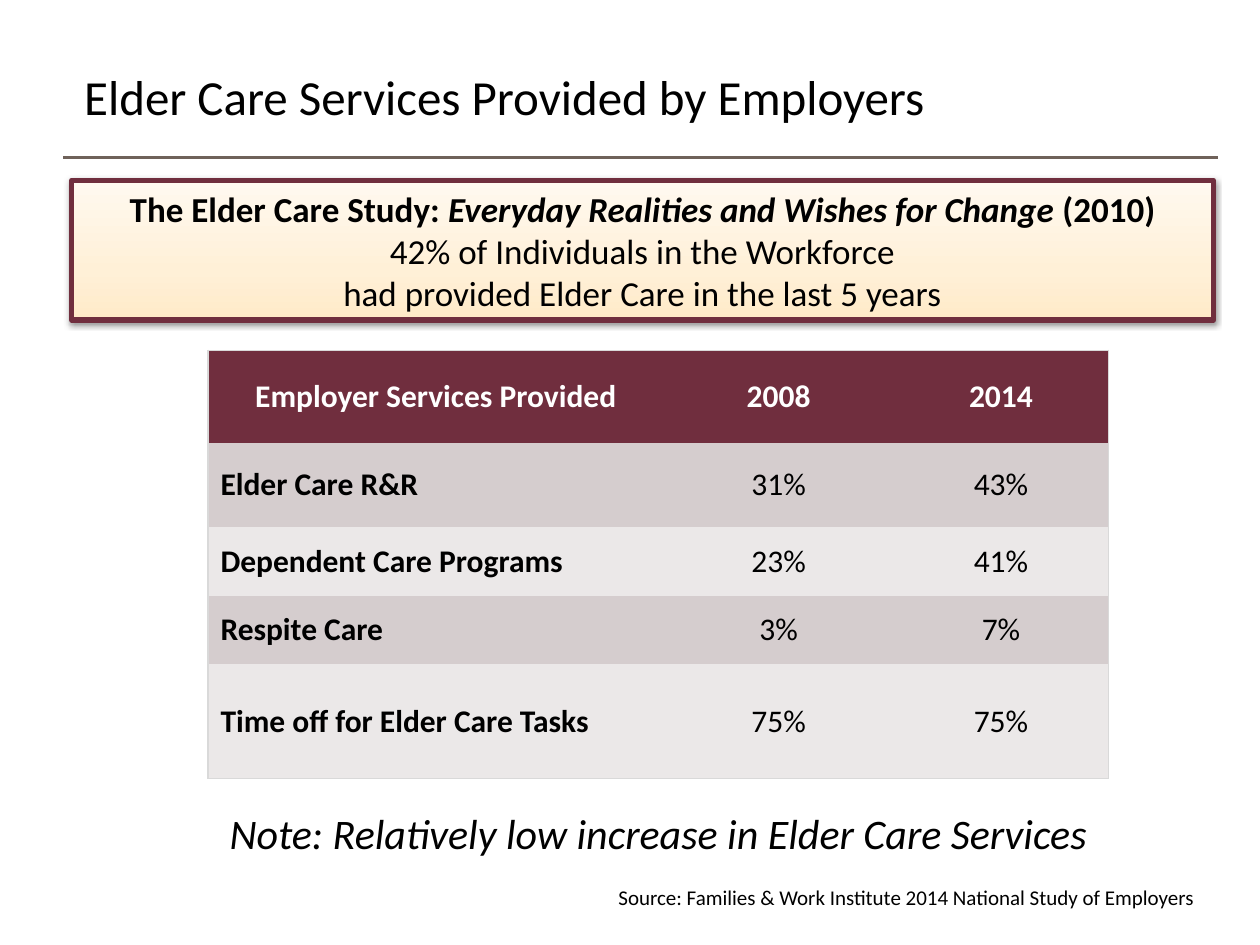
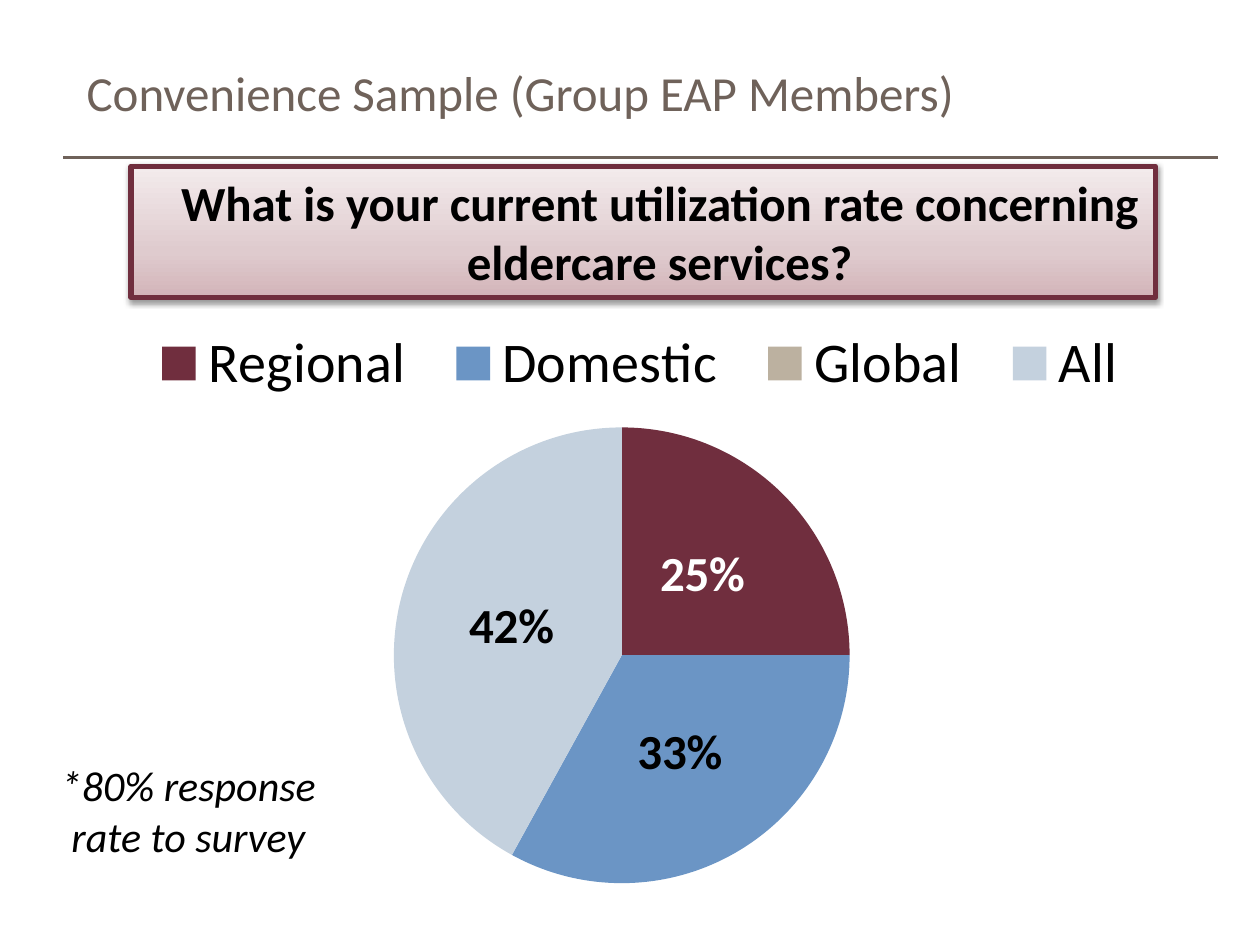
from copy import deepcopy

from lxml.etree import SubElement
from pptx import Presentation
from pptx.chart.data import CategoryChartData
from pptx.dml.color import RGBColor
from pptx.enum.chart import XL_CHART_TYPE, XL_LABEL_POSITION, XL_LEGEND_POSITION
from pptx.enum.shapes import MSO_CONNECTOR, MSO_SHAPE
from pptx.enum.text import MSO_ANCHOR, PP_ALIGN
from pptx.oxml import parse_xml
from pptx.oxml.ns import nsdecls, qn
from pptx.util import Inches, Pt

FONT = "Calibri"
BLACK = RGBColor(0x00, 0x00, 0x00)
WHITE = RGBColor(0xFF, 0xFF, 0xFF)
TAUPE = RGBColor(0x6F, 0x62, 0x5A)
WINE = RGBColor(0x70, 0x2E, 0x3E)
BORDER = RGBColor(0xD9, 0xD9, 0xD9)
ROW_FILLS = (RGBColor(0xD5, 0xCD, 0xCE), RGBColor(0xEB, 0xE8, 0xE8))
CREAM = (RGBColor(0xFF, 0xEA, 0xC8), RGBColor(0xFF, 0xF0, 0xD7), RGBColor(0xFF, 0xF9, 0xF0))
ROSE = (RGBColor(0xD3, 0xB4, 0xB9), RGBColor(0xDF, 0xCB, 0xCE), RGBColor(0xF3, 0xEB, 0xEC))
GRADIENT_POSITIONS = (0, 0.35, 1)
NO_TABLE_STYLE = "{2D5ABB26-0587-4C30-8999-92F81FD0307C}"

SERVICES_TITLE = "Elder Care Services Provided by Employers"
STUDY = [
    [("The Elder Care Study: ", {"bold": True}),
     ("Everyday Realities and Wishes for Change ", {"bold": True, "italic": True}),
     ("(2010)", {"bold": True})],
    "42% of Individuals in the Workforce",
    "had provided Elder Care in the last 5 years",
]
SERVICES = [
    ("Employer Services Provided", "2008", "2014"),
    ("Elder Care R&R", "31%", "43%"),
    ("Dependent Care Programs", "23%", "41%"),
    ("Respite Care", "3%", "7%"),
    ("Time off for Elder Care Tasks", "75%", "75%"),
]
COLUMN_WIDTHS = (3.62, 1.82, 1.71)
ROW_HEIGHTS = (0.74, 0.66, 0.55, 0.54, 0.91)
SERVICES_NOTE = "Note: Relatively low increase in Elder Care Services"
SOURCE = "Source: Families & Work Institute 2014 National Study of Employers"

SAMPLE_TITLE = "Convenience Sample (Group EAP Members)"
QUESTION = ["What is your current utilization rate concerning", "eldercare services?"]
UTILIZATION = [
    ("Regional", 25, WINE),
    ("Domestic", 33, RGBColor(0x6B, 0x95, 0xC5)),
    ("Global", 0, RGBColor(0xBC, 0xB1, 0xA0)),
    ("All", 42, RGBColor(0xC4, 0xD1, 0xDE)),
]
PLOT_LAYOUT = {"x": 0.3, "y": 0.32, "w": 0.38, "h": 0.68}
LEGEND_LAYOUT = {"x": 0.08, "y": 0.2, "w": 0.85, "h": 0.12}
RESPONSE_NOTE = "*80% response rate to survey"


def write(frame, paragraphs, size, color=BLACK, bold=False, italic=False,
          align=PP_ALIGN.LEFT, indent=0):
    frame.word_wrap = True
    if isinstance(paragraphs, str):
        paragraphs = [paragraphs]
    for index, spans in enumerate(paragraphs):
        para = frame.add_paragraph() if index else frame.paragraphs[0]
        para.alignment = align
        if indent:
            properties = para._p.get_or_add_pPr()
            properties.set("marL", str(Inches(indent)))
            properties.set("indent", "0")
        for words, style in [(spans, {})] if isinstance(spans, str) else spans:
            span = para.add_run()
            span.text = words
            span.font.name = FONT
            span.font.size = Pt(size)
            span.font.color.rgb = color
            span.font.bold = style.get("bold", bold)
            span.font.italic = style.get("italic", italic)


def add_text(page, bounds, words, size, **style):
    box = page.shapes.add_textbox(*map(Inches, bounds))
    write(box.text_frame, words, size, **style)


def new_page(deck):
    page = deck.slides.add_slide(deck.slide_layouts[6])
    ends = map(Inches, (0.5, 1.25, 9.67, 1.25))
    rule = page.shapes.add_connector(MSO_CONNECTOR.STRAIGHT, *ends)
    rule.line.color.rgb = TAUPE
    rule.line.width = Pt(2.25)
    SubElement(rule._element.spPr, qn("a:effectLst"))
    return page


def add_banner(page, bounds, words, size, colors, **style):
    banner = page.shapes.add_shape(MSO_SHAPE.RECTANGLE, *map(Inches, bounds))
    banner.fill.gradient()
    banner.fill.gradient_angle = 90
    stop_list = banner._element.spPr.find(".//" + qn("a:gsLst"))
    stop_list.append(deepcopy(stop_list[0]))
    for stop, color, position in zip(banner.fill.gradient_stops, colors, GRADIENT_POSITIONS):
        stop.color.rgb = color
        stop.position = position
    banner.line.color.rgb = WINE
    banner.line.width = Pt(3)
    banner.shadow.inherit = False
    banner._element.spPr.find(qn("a:effectLst")).append(parse_xml(
        f'<a:outerShdw {nsdecls("a")} blurRad="{Pt(3.1)}" dist="{Pt(1.6)}" dir="5400000" '
        'rotWithShape="0"><a:srgbClr val="000000"><a:alpha val="38000"/></a:srgbClr>'
        '</a:outerShdw>'))
    banner.text_frame.vertical_anchor = MSO_ANCHOR.MIDDLE
    write(banner.text_frame, words, size, align=PP_ALIGN.CENTER, **style)


def set_borders(cell, outer_sides):
    properties = cell._tc.get_or_add_tcPr()
    for side in ("L", "R", "T", "B"):
        if side in outer_sides:
            paint = f'<a:solidFill><a:srgbClr val="{BORDER}"/></a:solidFill>'
        else:
            paint = "<a:noFill/>"
        properties.append(parse_xml(
            f'<a:ln{side} {nsdecls("a")} w="{Pt(1)}">{paint}</a:ln{side}>'))


def add_services_table(page):
    size = len(SERVICES), len(COLUMN_WIDTHS)
    bounds = (1.65, 2.78, sum(COLUMN_WIDTHS), sum(ROW_HEIGHTS))
    frame = page.shapes.add_table(*size, *map(Inches, bounds))
    table = frame.table
    table._tbl.tblPr.find(qn("a:tableStyleId")).text = NO_TABLE_STYLE
    table.horz_banding = False
    for column, width in zip(table.columns, COLUMN_WIDTHS):
        column.width = Inches(width)
    for row, height in zip(table.rows, ROW_HEIGHTS):
        row.height = Inches(height)
    last_row, last_column = size[0] - 1, size[1] - 1
    for r, values in enumerate(SERVICES):
        for c, value in enumerate(values):
            cell = table.cell(r, c)
            edges = {"L": c == 0, "R": c == last_column, "T": r == 0, "B": r == last_row}
            set_borders(cell, [side for side, outer in edges.items() if outer])
            header = r == 0
            cell.fill.solid()
            cell.fill.fore_color.rgb = WINE if header else ROW_FILLS[(r - 1) % 2]
            cell.vertical_anchor = MSO_ANCHOR.MIDDLE
            write(cell.text_frame, value, 18, color=WHITE if header else BLACK,
                  bold=header or c == 0,
                  align=PP_ALIGN.CENTER if header or c else PP_ALIGN.LEFT)


def manual_layout(layout, target=""):
    modes = '<c:xMode val="edge"/><c:yMode val="edge"/>'
    sizes = "".join(f'<c:{key} val="{value}"/>' for key, value in layout.items())
    return parse_xml(f'<c:layout {nsdecls("c")}><c:manualLayout>{target}{modes}{sizes}'
                     '</c:manualLayout></c:layout>')


def place(element, layout, anchor, target=""):
    for old in element.findall(qn("c:layout")):
        element.remove(old)
    position = 0 if anchor is None else element.index(element.find(qn(anchor))) + 1
    element.insert(position, manual_layout(layout, target))


def style_labels(series):
    labels = series.data_labels
    labels.show_percentage = True
    labels.show_value = False
    labels.number_format = "0%"
    labels.number_format_is_linked = False
    labels.position = XL_LABEL_POSITION.CENTER
    labels.font.name = FONT
    labels.font.size = Pt(28)
    labels.font.bold = True
    labels.font.color.rgb = BLACK

    regional = series.points[0].data_label
    regional.font.name = FONT
    regional.font.size = Pt(28)
    regional.font.bold = True
    regional.font.color.rgb = WHITE
    regional.position = XL_LABEL_POSITION.CENTER
    for index, (_, value, _) in enumerate(UTILIZATION):
        if value == 0:
            series.points[index].data_label.position = XL_LABEL_POSITION.CENTER
    for label in labels._element.findall(qn("c:dLbl")):
        index = int(label.find(qn("c:idx")).get("val"))
        if UTILIZATION[index][1]:
            label.find(qn("c:showVal")).set("val", "0")
            label.find(qn("c:showPercent")).set("val", "1")
        else:
            for child in list(label)[1:]:
                label.remove(child)
            SubElement(label, qn("c:delete")).set("val", "1")


def add_utilization_chart(page):
    data = CategoryChartData()
    data.categories = [name for name, _, _ in UTILIZATION]
    data.add_series("Series 1", [value for _, value, _ in UTILIZATION])
    bounds = map(Inches, (0.27, 1.38, 9.52, 5.79))
    chart = page.shapes.add_chart(XL_CHART_TYPE.PIE, *bounds, data).chart
    chart.has_title = False
    chart.font.name = FONT
    chart.font.size = Pt(18)
    chart.font.color.rgb = BLACK
    chart.has_legend = True
    chart.legend.position = XL_LEGEND_POSITION.TOP
    chart.legend.include_in_layout = False
    chart.legend.font.name = FONT
    chart.legend.font.size = Pt(32)
    chart.legend.font.color.rgb = BLACK
    place(chart.legend._element, LEGEND_LAYOUT, "c:legendPos")
    plot_area = chart._chartSpace.find(".//" + qn("c:plotArea"))
    place(plot_area, PLOT_LAYOUT, None, '<c:layoutTarget val="inner"/>')
    series = chart.plots[0].series[0]
    for index, (_, _, color) in enumerate(UTILIZATION):
        fill = series.points[index].format.fill
        fill.solid()
        fill.fore_color.rgb = color
    style_labels(series)


def build_services_page(deck):
    page = new_page(deck)
    add_text(page, (0.57, 0.48, 7.27, 0.57), SERVICES_TITLE, 28)
    add_services_table(page)
    add_text(page, (4.81, 6.97, 4.94, 0.3), SOURCE, 12)
    add_text(page, (1.65, 6.36, 7.15, 0.5), SERVICES_NOTE, 24, italic=True,
             align=PP_ALIGN.CENTER)
    add_banner(page, (0.57, 1.43, 9.06, 1.11), STUDY, 20, CREAM)


def build_sample_page(deck):
    page = new_page(deck)
    add_utilization_chart(page)
    add_text(page, (0.5, 0.45, 7.26, 0.75), SAMPLE_TITLE, 28, color=TAUPE, indent=0.09)
    add_banner(page, (1.04, 1.32, 8.13, 1.04), QUESTION, 28, ROSE, bold=True, indent=0.26)
    add_text(page, (0.37, 5.98, 2.25, 0.91), RESPONSE_NOTE, 24, italic=True,
             align=PP_ALIGN.CENTER)


def main():
    deck = Presentation()
    deck.slide_width = Inches(10)
    deck.slide_height = Inches(7.5)
    build_services_page(deck)
    build_sample_page(deck)
    deck.save("out.pptx")


if __name__ == "__main__":
    main()
